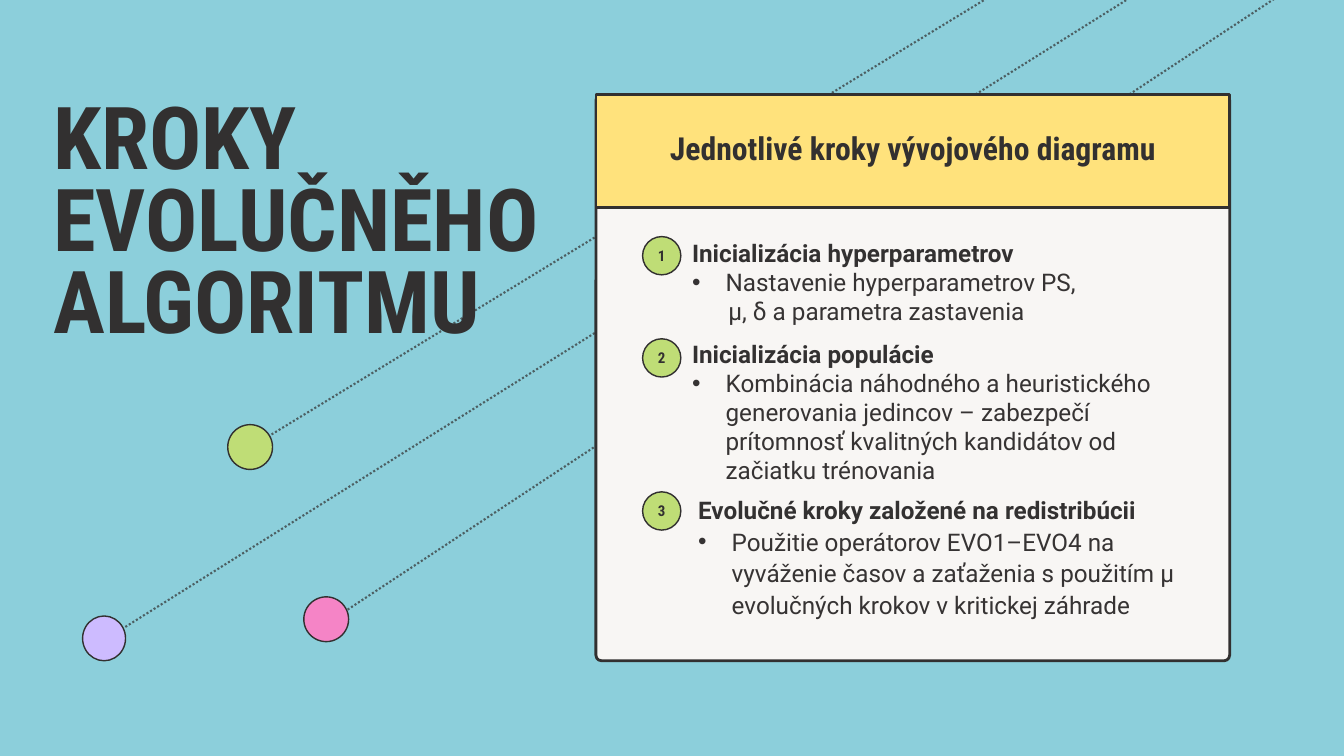
from dataclasses import dataclass
from typing import Any
from lxml.etree import SubElement as Sub
from pptx import Presentation
from pptx.dml.color import RGBColor
from pptx.enum.dml import MSO_LINE_DASH_STYLE as Dash
from pptx.enum.shapes import MSO_CONNECTOR as Conn, MSO_SHAPE as Kind
from pptx.enum.text import MSO_ANCHOR as Anchor, PP_ALIGN as Align
from pptx.oxml.ns import qn
from pptx.util import Pt


def hue(code):
    return RGBColor.from_string(code)


def write(para, text, font="Roboto", size=26, color="363333", bold=False,
          align=Align.LEFT, lead=None, left=0, bullet=False):
    run = para.add_run()
    run.text = text
    run.font.name, run.font.size, run.font.bold = font, Pt(size), bold
    run.font.color.rgb = hue(color)
    para.alignment = align
    if lead:
        para.line_spacing = Pt(lead)
    props = para._p.get_or_add_pPr()
    props.set("marL", str(Pt(left)))
    props.set("indent", str(Pt(-left if bullet else 0)))
    if bullet:
        Sub(props, qn("a:buFont")).set("typeface", "Arial")
        Sub(props, qn("a:buChar")).set("char", "•")


@dataclass
class Deck:
    slide: Any
    ink: str = "323030"
    head: str = "Roboto Condensed"

    def ground(self, color):
        fill = self.slide.background.fill
        fill.solid()
        fill.fore_color.rgb = hue(color)

    def ray(self, *ends):
        line = self.slide.shapes.add_connector(Conn.STRAIGHT, *map(Pt, ends))
        line.line.width = Pt(2.25)
        line.line.color.rgb = hue(self.ink)
        line.line.dash_style = Dash.ROUND_DOT
        props = line._element.spPr
        tone = props.find(".//" + qn("a:srgbClr"))
        Sub(tone, qn("a:alpha")).set("val", "70000")
        Sub(props, qn("a:effectLst"))

    def shape(self, kind, box, color, width):
        item = self.slide.shapes.add_shape(kind, *map(Pt, box))
        item.shadow.inherit = False
        item.fill.solid()
        item.fill.fore_color.rgb = hue(color)
        item.line.color.rgb = hue(self.ink)
        item.line.width = Pt(width)
        return item

    def frame(self, item, anchor=Anchor.TOP):
        body = item.text_frame
        body.margin_left = body.margin_right = 0
        body.margin_top = body.margin_bottom = 0
        body.word_wrap = True
        body.vertical_anchor = anchor
        return body

    def text(self, box):
        return self.frame(self.slide.shapes.add_textbox(*map(Pt, box)))

    def label(self, box, text, **style):
        write(self.text(box).paragraphs[0], text, font=self.head,
              color=self.ink, bold=True, **style)

    def badge(self, top, text):
        item = self.shape(Kind.OVAL, (688.5, top, 41, 41), "BFDD76", 1.5)
        para = self.frame(item, Anchor.MIDDLE).paragraphs[0]
        write(para, text, font=self.head, size=16, color=self.ink, bold=True,
              align=Align.CENTER, lead=19.2)

    def step(self, box, title, lines, lead=None):
        body = self.text(box)
        write(body.paragraphs[0], title, color="333131", bold=True, lead=lead)
        for text, left, bullet in lines:
            write(body.add_paragraph(), text, left=left, bullet=bullet,
                  lead=lead)


def main():
    prs = Presentation()
    prs.slide_width, prs.slide_height = Pt(1440), Pt(810)
    deck = Deck(prs.slides.add_slide(prs.slide_layouts[6]))
    deck.ground("8CCFDB")

    deck.ray(268, 479.5, 1280, -137.5)
    deck.ray(111.5, 686, 1287.5, -50.5)
    deck.ray(350, 668, 1440, -50.5)
    dots = [((88.5, 660, 46, 48), "CDBBFF"),
            ((244, 455, 48, 48), "BFDD76"),
            ((325.5, 639.5, 48, 48), "F584C6")]
    for box, color in dots:
        deck.shape(Kind.OVAL, box, color, 1.5)

    left, top, wide = 638.5, 101.5, 679
    card = deck.shape(Kind.ROUNDED_RECTANGLE, (left, top, wide, 606.5),
                      "F8F6F4", 3)
    card.adjustments[0] = 0.01
    deck.label((57, 111.5, 530, 268), "KROKY EVOLUČNĚHO ALGORITMU",
               size=93, lead=88.3)
    deck.shape(Kind.RECTANGLE, (left, top, wide, 120.5), "FFE27C", 3)
    deck.label((675, 147, 606, 33), "Jednotlivé kroky vývojového diagramu",
               size=34, lead=32.3, align=Align.CENTER)

    steps = [
        (253.5, (741.5, 255.5, 533, 94), "Inicializácia hyperparametrov",
         [("Nastavenie hyperparametrov PS,", 36, True),
          ("μ, δ a parametra zastavenia", 39, False)], None),
        (363, (741.5, 363.5, 526, 158), "Inicializácia populácie",
         [("Kombinácia náhodného a heuristického generovania jedincov – "
           "zabezpečí prítomnosť kvalitných kandidátov od začiatku "
           "trénovania", 36, True)], None),
        (527, (748, 528, 526, 135), "Evolučné kroky založené na redistribúcii",
         [("Použitie operátorov EVO1–EVO4 na vyváženie časov a zaťaženia "
           "s použitím μ evolučných krokov v kritickej záhrade", 36, True)],
         33.8),
    ]
    for num, (y, box, title, lines, lead) in enumerate(steps, 1):
        deck.badge(y, str(num))
        deck.step(box, title, lines, lead)

    prs.save("out.pptx")


if __name__ == "__main__":
    main()
